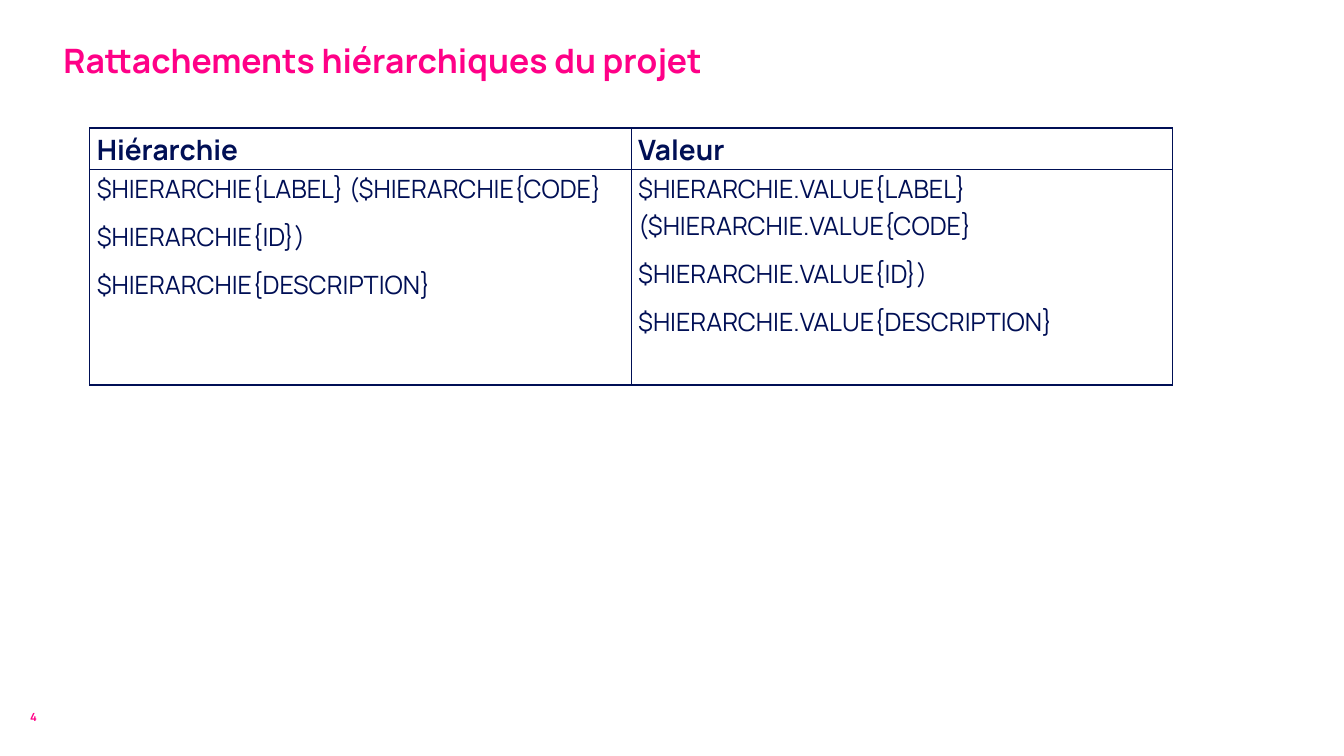
from lxml import etree
from pptx import Presentation
from pptx.dml.color import RGBColor
from pptx.enum.text import MSO_ANCHOR
from pptx.oxml.ns import qn
from pptx.util import Inches, Pt

MIDDLE, BOTTOM, TOP = MSO_ANCHOR.MIDDLE, MSO_ANCHOR.BOTTOM, MSO_ANCHOR.TOP
FONT, PINK, NAVY = "Manrope", "FF0087", "000F55"

TITLE = "Rattachements hiérarchiques du projet"
PAGE_NUMBER = "4"
HEADERS = ["Hiérarchie", "Valeur"]
DETAILS = [
    ["$HIERARCHIE{LABEL} ($HIERARCHIE{CODE}",
     "$HIERARCHIE{ID})",
     "$HIERARCHIE{DESCRIPTION}"],
    ["$HIERARCHIE.VALUE{LABEL} ($HIERARCHIE.VALUE{CODE}",
     "$HIERARCHIE.VALUE{ID})",
     "$HIERARCHIE.VALUE{DESCRIPTION}"],
]
TABLE_BOX = (0.89, 1.27, 10.74, 2.55)
ROW_HEIGHTS = [0.41, 2.14]


def color(value):
    return RGBColor.from_string(value)


def write(frame, lines, *, size, fill, bold=False, spacing=None, after=None):
    frame.word_wrap = True
    for index, line in enumerate(lines):
        paragraph = frame.paragraphs[0] if index == 0 else frame.add_paragraph()
        if spacing:
            paragraph.line_spacing = spacing
        if after:
            paragraph.space_after = Pt(after)
        run = paragraph.add_run()
        run.text = line
        run.font.name = FONT
        run.font.size = Pt(size)
        run.font.bold = bold
        run.font.color.rgb = color(fill)


def add_text(slide, box, text, *, anchor, **style):
    frame = slide.shapes.add_textbox(*map(Inches, box)).text_frame
    frame.vertical_anchor = anchor
    write(frame, [text], **style)


def add_borders(cell):
    properties = cell._tc.get_or_add_tcPr()
    for index, side in enumerate(("lnL", "lnR", "lnT", "lnB")):
        line = etree.Element(qn(f"a:{side}"), w=str(Pt(1)))
        solid = etree.SubElement(line, qn("a:solidFill"))
        etree.SubElement(solid, qn("a:srgbClr"), val=NAVY)
        properties.insert(index, line)


def fill_cell(cell, lines, **style):
    cell.margin_left = cell.margin_right = Inches(0.07)
    cell.margin_top = cell.margin_bottom = 0
    cell.vertical_anchor = TOP
    cell.fill.background()
    add_borders(cell)
    write(cell.text_frame, lines, fill=NAVY, spacing=1.07, after=8, **style)


def add_hierarchy_table(slide):
    table = slide.shapes.add_table(
        len(ROW_HEIGHTS), len(HEADERS), *map(Inches, TABLE_BOX)).table
    table.first_row = table.horz_banding = False
    for row, height in zip(table.rows, ROW_HEIGHTS):
        row.height = Inches(height)
    for index, (header, details) in enumerate(zip(HEADERS, DETAILS)):
        table.columns[index].width = Inches(TABLE_BOX[2] / len(HEADERS))
        fill_cell(table.cell(0, index), [header], size=20, bold=True)
        fill_cell(table.cell(1, index), details, size=18)


def main():
    presentation = Presentation()
    presentation.slide_width = Inches(13.33)
    presentation.slide_height = Inches(7.5)
    slide = presentation.slides.add_slide(presentation.slide_layouts[6])
    add_text(slide, (0.2, 6.97, 0.59, 0.28), PAGE_NUMBER,
             anchor=MIDDLE, size=8, fill=PINK, bold=True)
    add_text(slide, (0.53, 0.29, 12.02, 0.55), TITLE,
             anchor=BOTTOM, size=24, fill=PINK, bold=True)
    add_hierarchy_table(slide)
    presentation.save("out.pptx")


if __name__ == "__main__":
    main()
